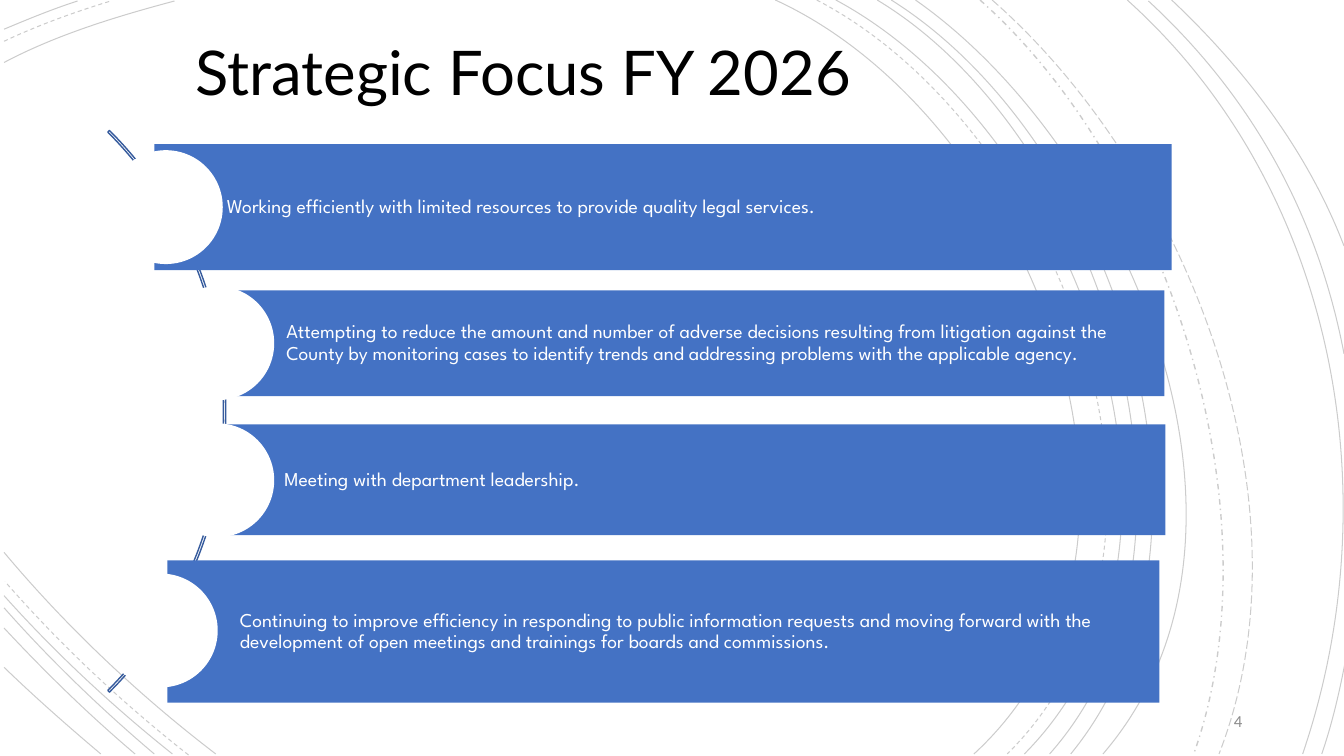
from lxml import etree
from pptx import Presentation
from pptx import util as u
from pptx.dml import color
from pptx.enum import dml, shapes, text
from pptx.oxml import ns


def paint(fill, colour, opacity=100):
    fill.solid()
    fill.fore_color.rgb = color.RGBColor.from_string(colour)
    if opacity < 100:
        tone = fill._xPr.find(".//" + ns.qn("a:srgbClr"))
        etree.SubElement(tone, ns.qn("a:alpha"), val=str(opacity * 1000))


def write(shape, wording, font, size, colour, align=text.PP_ALIGN.LEFT,
          anchor=text.MSO_ANCHOR.MIDDLE, spacing=1.0, insets=(0.1, 0.05, 0.1, 0.05)):
    frame = shape.text_frame
    frame.word_wrap = True
    frame.auto_size = text.MSO_AUTO_SIZE.NONE
    frame.vertical_anchor = anchor
    frame.margin_left, frame.margin_top, frame.margin_right, frame.margin_bottom = map(u.Inches, insets)
    paragraph = frame.paragraphs[0]
    paragraph.alignment = align
    paragraph.line_spacing = spacing
    run = paragraph.add_run()
    run.text = wording
    run.font.name = font
    run.font.size = u.Pt(size)
    paint(run.font.fill, colour)


presentation = Presentation()
presentation.slide_width = u.Inches(13.33)
presentation.slide_height = u.Inches(7.5)
slide = presentation.slides.add_slide(presentation.slide_layouts[5])

SOLID, DASH = dml.MSO_LINE.SOLID, dml.MSO_LINE.DASH
DASH_DOT, LONG_DASH = dml.MSO_LINE.DASH_DOT, dml.MSO_LINE.LONG_DASH
curves = [
    (SOLID, (7.69, 0), (10.2, 1.15), (11.92, 5.4), (9.66, 7.48)),
    (SOLID, (0.04, 0.62), (0.57, 0.34), (1.17, 0.16), (1.73, 0.01)),
    (SOLID, (2.14, 7.48), (1.38, 6.9), (0.66, 6.22), (0.04, 5.48)),
    (DASH, (8.1, 0), (10.5, 1.25), (12.12, 5.37), (9.99, 7.48)),
    (DASH, (0.04, 0.41), (0.38, 0.25), (0.74, 0.12), (1.1, 0.01)),
    (DASH, (1.87, 7.49), (1.22, 6.98), (0.6, 6.4), (0.05, 5.77)),
    (SOLID, (8.29, 0), (10.65, 1.27), (12.25, 5.37), (10.16, 7.48)),
    (SOLID, (0.04, 0.29), (0.28, 0.19), (0.52, 0.09), (0.77, 0.01)),
    (SOLID, (1.71, 7.48), (1.12, 7.01), (0.55, 6.48), (0.04, 5.91)),
    (SOLID, (8.7, 0), (10.91, 1.33), (12.25, 5.41), (10.41, 7.48)),
    (SOLID, (1.53, 7.48), (1.01, 7.04), (0.5, 6.55), (0.04, 6.03)),
    (SOLID, (8.84, 0), (11.04, 1.38), (12.38, 5.33), (10.62, 7.48)),
    (SOLID, (1.34, 7.48), (0.88, 7.09), (0.45, 6.67), (0.04, 6.23)),
    (SOLID, (9.08, 0), (11.18, 1.47), (12.82, 5.29), (10.94, 7.48)),
    (SOLID, (1, 7.48), (0.68, 7.21), (0.35, 6.92), (0.04, 6.62)),
    (DASH_DOT, (9.72, 0), (11.59, 1.66), (12.69, 5.09), (11.84, 7.48)),
    (LONG_DASH, (9.84, 0), (11.77, 1.69), (13.06, 4.99), (12.09, 7.48)),
    (SOLID, (11.18, 0), (13.24, 1.85), (13.8, 4.9), (12.92, 7.48)),
    (SOLID, (11.39, 0.01), (12.42, 0.96), (13.07, 2.14), (13.33, 3.51)),
    (SOLID, (13.34, 6.58), (13.28, 6.89), (13.21, 7.19), (13.11, 7.48)),
    (SOLID, (11.62, 0), (12.35, 0.69), (12.97, 1.5), (13.33, 2.44)),
]
for dash, *controls in curves:
    start, *rest = [(u.Inches(x), u.Inches(y)) for x, y in controls]
    builder = slide.shapes.build_freeform(*start)
    builder.add_line_segments(rest, close=False)
    curve = builder.convert_to_shape()
    segments = list(curve.element.iter(ns.qn("a:lnTo")))
    bezier = etree.SubElement(segments[0].getparent(), ns.qn("a:cubicBezTo"))
    for segment in segments:
        bezier.append(segment[0])
        segment.getparent().remove(segment)
    curve.shadow.inherit = False
    curve.fill.background()
    paint(curve.line.fill, "000000", opacity=20)
    curve.line.width = u.Pt(1 if dash == DASH_DOT else 0.75)
    curve.line.dash_style = dash

title = slide.shapes.title
title.left, title.top, title.width, title.height = map(u.Inches, (0.15, 0.37, 10.24, 0.89))
write(title, "Strategic Focus FY 2026 ", "Lato", 44, "000000", align=text.PP_ALIGN.CENTER,
      anchor=text.MSO_ANCHOR.TOP, spacing=0.9)
title.element.getparent().append(title.element)

arc = slide.shapes.add_shape(shapes.MSO_SHAPE.BLOCK_ARC, *map(u.Inches, (-5.64, 0.14, 7.88, 7.88)))
arc.adjustments[0], arc.adjustments[1], arc.adjustments[2] = 189, 27, 0.003
arc.shadow.inherit = False
arc.fill.background()
paint(arc.line.fill, "365B9D")
arc.line.width = u.Pt(1)

DIAMETER = 1.13
goals = [
    ((1.53, 1.43, 10.09, 1.25), (1.08, 1.49),
     "Working efficiently with limited resources to provide quality legal services."),
    ((2.12, 2.88, 9.43, 1.05), (1.59, 2.84),
     "Attempting to reduce the amount and number of adverse decisions resulting from litigation "
     "against the County by monitoring cases to identify trends and addressing problems with the "
     "applicable agency."),
    ((2.1, 4.21, 9.46, 1.1), (1.59, 4.2),
     "Meeting with department leadership."),
    ((1.66, 5.56, 9.84, 1.41), (1.03, 5.69),
     "Continuing to improve efficiency in responding to public information requests and moving "
     "forward with the development of open meetings and trainings for boards and commissions."),
]
for bar_box, circle_corner, wording in goals:
    bar = slide.shapes.add_shape(shapes.MSO_SHAPE.RECTANGLE, *map(u.Inches, bar_box))
    circle = slide.shapes.add_shape(
        shapes.MSO_SHAPE.OVAL, *map(u.Inches, (*circle_corner, DIAMETER, DIAMETER)))
    for shape, colour in ((bar, "4472C4"), (circle, "FFFFFF")):
        shape.shadow.inherit = False
        paint(shape.fill, colour)
        shape.line.fill.background()
    write(bar, wording, "League Spartan", 14, "FFFFFF", spacing=0.9,
          insets=(0.72, 0.04, 0.04, 0.04))

page_number = slide.shapes.add_textbox(*map(u.Inches, (9.42, 6.95, 3, 0.4)))
write(page_number, "4", "Calibri", 12, "8C8C8C", align=text.PP_ALIGN.RIGHT)

presentation.save("out.pptx")
